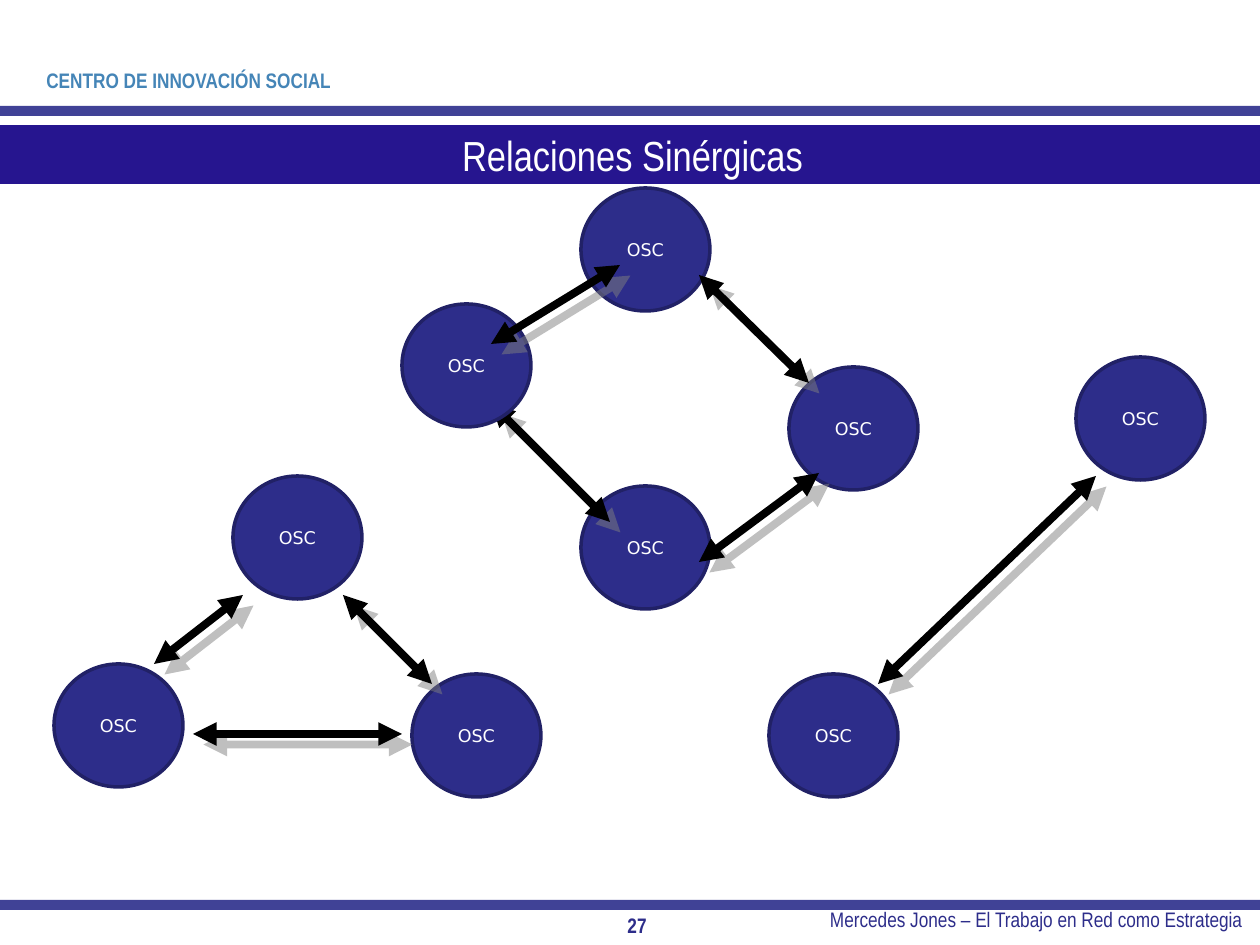
"""Build the slide on synergic relations between organisations."""
from lxml import etree
from pptx import Presentation
from pptx.dml.color import RGBColor
from pptx.enum.shapes import MSO_CONNECTOR, MSO_SHAPE
from pptx.enum.text import MSO_ANCHOR, MSO_AUTO_SIZE, PP_ALIGN
from pptx.oxml.ns import qn
from pptx.util import Pt

LEFT, CENTER, RIGHT = PP_ALIGN.LEFT, PP_ALIGN.CENTER, PP_ALIGN.RIGHT
TOP, MIDDLE = MSO_ANCHOR.TOP, MSO_ANCHOR.MIDDLE
RECTANGLE, OVAL = MSO_SHAPE.RECTANGLE, MSO_SHAPE.OVAL
STRAIGHT = MSO_CONNECTOR.STRAIGHT
NO_AUTOFIT = MSO_AUTO_SIZE.NONE

NARROW, SANS = "Arial Narrow", "DejaVu Sans"
COLORS = {
    "bar": "404296", "title": "26158F", "header": "4585B7", "white": "FFFFFF",
    "node": "2D2D8A", "outline": "212166", "arrow": "000000", "shadow": "808080",
}

TITLE = ("Relaciones Sinérgicas", (0, 125, 1265, 59))
BAR_TOPS = [900, 106]
BAR_HEIGHT = 10
LABELS = [
    ("CENTRO DE INNOVACIÓN SOCIAL", (34, 45, 312, 71), LEFT, MIDDLE, "header", True),
    ("Mercedes Jones – El Trabajo en Red como Estrategia",
     (669, 900, 586, 49), RIGHT, TOP, "node", False),
    ("27", (610, 906, 54, 39), CENTER, MIDDLE, "node", True),
]
NODE_TEXT = "OSC"
NODE_SIZE = (129, 123)
LAYERS = [
    {
        "nodes": [(233, 476), (54, 664), (412, 674), (769, 674),
                  (581, 188), (789, 367), (581, 486), (1076, 357)],
        "arrows": [(154, 664, 243, 595), (193, 734, 402, 734), (432, 684, 343, 595),
                   (610, 522, 491, 403), (809, 383, 699, 275), (878, 684, 1096, 476)],
    },
    {
        "nodes": [(402, 304)],
        "arrows": [(491, 344, 620, 265), (819, 473, 699, 562)],
    },
]

EMU_PER_PX = 914400 / 126


def px(*lengths):
    return [round(length * EMU_PER_PX) for length in lengths]


def color(name):
    return RGBColor.from_string(COLORS[name])


def write(shape, text, font_name, size, color_name, align=CENTER, anchor=MIDDLE,
          bold=False, wrap=True):
    frame = shape.text_frame
    frame.text = text
    frame.auto_size = NO_AUTOFIT
    frame.word_wrap = wrap
    frame.vertical_anchor = anchor
    paragraph = frame.paragraphs[0]
    paragraph.alignment = align
    font = paragraph.font
    font.name, font.size, font.bold = font_name, Pt(size), bold
    font.color.rgb = color(color_name)


def add_filled(slide, kind, box, fill, outline=None):
    shape = slide.shapes.add_shape(kind, *px(*box))
    shape.shadow.inherit = False
    shape.fill.solid()
    shape.fill.fore_color.rgb = color(fill)
    if outline:
        shape.line.color.rgb = color(outline)
        shape.line.width = Pt(2)
    else:
        shape.line.fill.background()
    return shape


def add_arrow(slide, ends):
    connector = slide.shapes.add_connector(STRAIGHT, *px(*ends))
    connector.line.color.rgb = color("arrow")
    connector.line.width = Pt(4.5)
    line = connector.line._get_or_add_ln()
    for tag in ("a:headEnd", "a:tailEnd"):
        etree.SubElement(line, qn(tag), type="triangle")
    effects = etree.SubElement(connector._element.spPr, qn("a:effectLst"))
    shadow = etree.SubElement(effects, qn("a:outerShdw"), dist=str(Pt(8.5)),
                              dir=str(45 * 60000), algn="ctr", rotWithShape="0")
    tint = etree.SubElement(shadow, qn("a:srgbClr"), val=COLORS["shadow"])
    etree.SubElement(tint, qn("a:alpha"), val="50000")


def main():
    presentation = Presentation()
    presentation.slide_width, presentation.slide_height = px(1260, 945)
    slide = presentation.slides.add_slide(presentation.slide_layouts[5])

    text, box = TITLE
    title = slide.shapes.title
    title.left, title.top, title.width, title.height = px(*box)
    title.fill.solid()
    title.fill.fore_color.rgb = color("title")
    write(title, text, NARROW, 24, "white")

    for top in BAR_TOPS:
        add_filled(slide, RECTANGLE, (0, top, 1260, BAR_HEIGHT), "bar")
    for text, box, align, anchor, color_name, bold in LABELS:
        label = slide.shapes.add_textbox(*px(*box))
        write(label, text, NARROW, 12, color_name, align, anchor, bold)

    for layer in LAYERS:
        for corner in layer["nodes"]:
            node = add_filled(slide, OVAL, corner + NODE_SIZE, "node", "outline")
            write(node, NODE_TEXT, SANS, 10, "white", wrap=False)
        for ends in layer["arrows"]:
            add_arrow(slide, ends)

    presentation.save("out.pptx")


if __name__ == "__main__":
    main()
